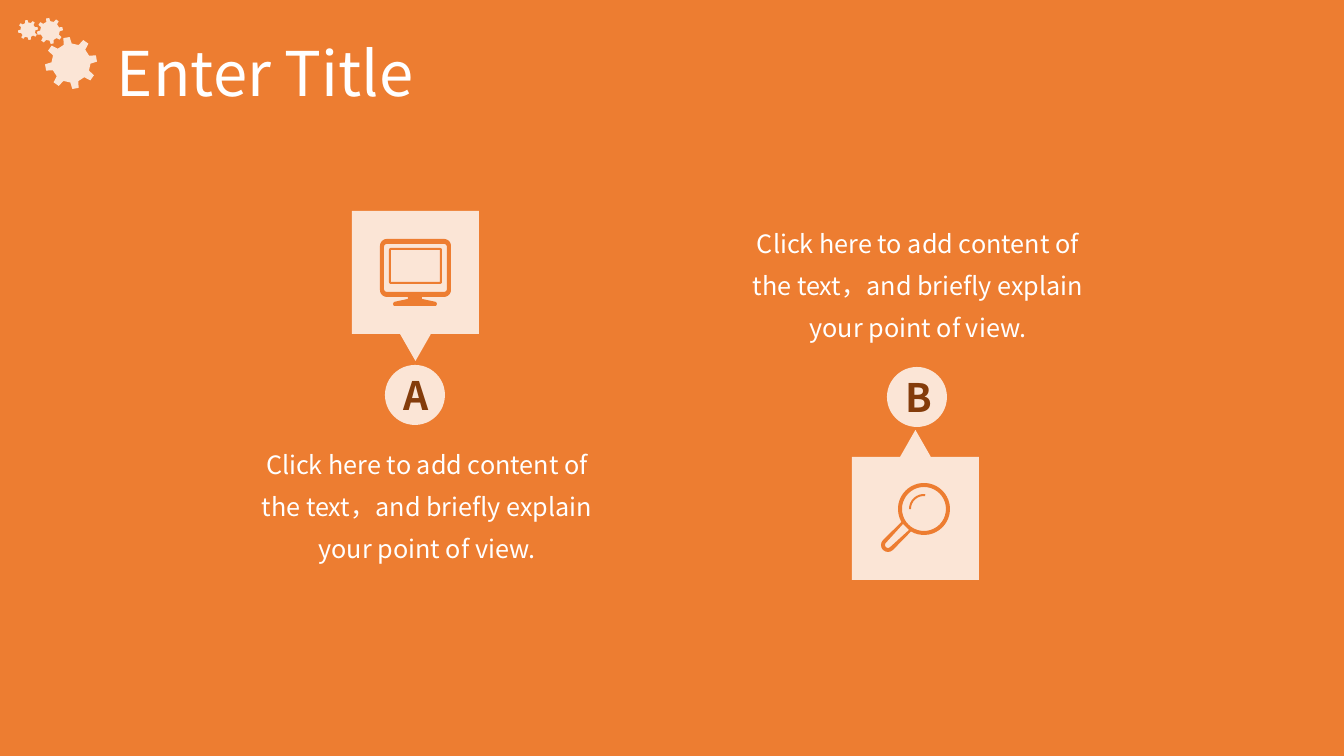
from math import cos, radians, sin

from pptx import Presentation
from pptx.dml.color import RGBColor
from pptx.enum.shapes import MSO_SHAPE as Kind
from pptx.enum.text import MSO_ANCHOR as Anchor, PP_ALIGN as Align
from pptx.util import Pt

PX = 12192000 / 1344
FONT = "Noto Sans CJK JP"
ORANGE, CREAM, BROWN, WHITE = "ED7D31", "FBE5D6", "843C0B", "FFFFFF"
BODY = "Click here to add content of the text，and briefly explain your point of view."
hue = RGBColor.from_string


def arc(x, y, size, start, end, steps=8):
    """Points on a circle, angles in degrees, clockwise from the right."""
    turns = [radians(start + (end - start) * i / steps) for i in range(steps + 1)]
    return [(x + size * cos(a), y + size * sin(a)) for a in turns]


def paint(shape, color):
    """Give a flat fill without line or shadow."""
    shape.shadow.inherit = False
    shape.fill.solid()
    shape.fill.fore_color.rgb = hue(color)
    shape.line.fill.background()


deck = Presentation()
deck.slide_width, deck.slide_height = round(1344 * PX), round(756 * PX)
slide = deck.slides.add_slide(deck.slide_layouts[6])
slide.background.fill.solid()
slide.background.fill.fore_color.rgb = hue(ORANGE)
shapes = slide.shapes

# Badges and callouts
labels = []
for letter, left, top, box_x, box_y, flip in [
    ("A", 385, 365, 352, 211, False),
    ("B", 887, 367, 852, 430, True),
]:
    badge = shapes.add_shape(Kind.OVAL, *[round(n * PX) for n in (left, top, 60, 60)])
    paint(badge, CREAM)
    labels.append((badge, letter, 28, BROWN, True, Align.CENTER, Anchor.MIDDLE, 1))
    card = shapes.add_shape(
        Kind.DOWN_ARROW_CALLOUT, *[round(n * PX) for n in (box_x, box_y, 127, 150)]
    )
    paint(card, CREAM)
    for i, ratio in enumerate((0.36, 0.12, 0.21, 0.82)):
        card.adjustments[i] = ratio
    if flip:
        card.element.spPr.xfrm.set("flipV", "1")

# Title and body text
for text, area, size, align, anchor, space in [
    (BODY, (242, 432, 370, 142), 18, Align.CENTER, Anchor.TOP, 1.4),
    (BODY, (733, 211, 370, 142), 18, Align.CENTER, Anchor.TOP, 1.4),
    ("Enter Title", (107, 18, 1159, 118), 44, Align.LEFT, Anchor.MIDDLE, 0.9),
]:
    box = shapes.add_textbox(*[round(n * PX) for n in area])
    labels.append((box, text, size, WHITE, False, align, anchor, space))

for shape, text, size, color, bold, align, anchor, space in labels:
    frame = shape.text_frame
    frame.word_wrap = True
    frame.vertical_anchor = anchor
    para = frame.paragraphs[0]
    para.alignment = align
    para.line_spacing = space
    run = para.add_run()
    run.text = text
    run.font.name = FONT
    run.font.size = Pt(size)
    run.font.bold = bold
    run.font.color.rgb = hue(color)

# Gears with eight teeth
icons = []
for x, y, size in [(50, 31, 13), (28, 30, 10), (71, 63, 26)]:
    gear = []
    for tooth in range(-10, 350, 45):
        for turn, reach in [(-12, 0.75), (-7, 1), (7, 1), (12, 0.75)]:
            gear += arc(x, y, size * reach, tooth + turn, tooth + turn, 1)[:1]
    icons.append((CREAM, [gear]))

# Monitor: case, screen frame and stand
screen = []
for left, top, right, base, bend in [
    (380, 239, 451, 297, 7),
    (384, 244, 447, 292, 3),
    (389, 248, 442, 284, 2),
    (391, 250, 440, 282, 0),
]:
    x1, x2, y1, y2 = left + bend, right - bend, top + bend, base - bend
    ring = []
    for i, (x, y) in enumerate([(x2, y1), (x2, y2), (x1, y2), (x1, y1)]):
        ring += arc(x, y, bend, i * 90 - 90, i * 90)
    screen.append(ring)
half = [(7, 297), (7, 299), (21, 302), (22, 304), (21, 306)]
stand = [(415 + x, y) for x, y in half] + [(415 - x, y) for x, y in half[::-1]]
icons.append((ORANGE, screen + [stand]))

# Magnifier: outline, lens, handle and glint
rim = arc(924, 509, 26, 120, -210, 40) + arc(888, 545, 7, 225, 45)
lens = arc(924, 509, 22, 0, 360, 40)
grip = [(903, 524), (909, 530)] + arc(888, 545, 3, 45, 225)
icons.append((ORANGE, [rim, lens, grip]))
glint = arc(924, 509, 15, 180, 275) + arc(924, 509, 13, 275, 180)
icons.append((ORANGE, [glint]))

for color, rings in icons:
    rings = [[(x * PX, y * PX) for x, y in ring] for ring in rings]
    pen = shapes.build_freeform(*rings[0][0])
    for ring in rings:
        if ring is not rings[0]:
            pen.move_to(*ring[0])
        pen.add_line_segments(ring[1:], close=True)
    paint(pen.convert_to_shape(), color)

deck.save("out.pptx")
